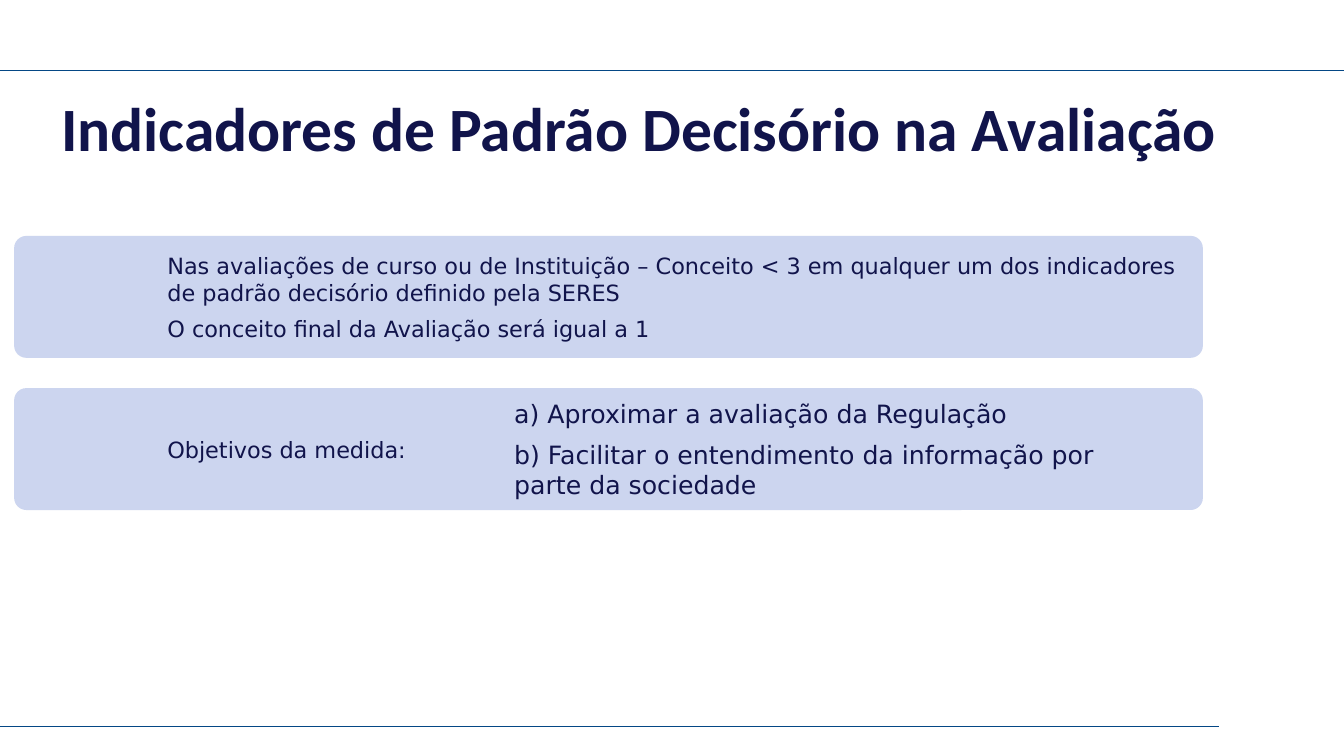
"""Build the slide on decisive indicators in course evaluation."""
from lxml.etree import SubElement
from pptx import Presentation
from pptx.dml.color import RGBColor
from pptx.enum.shapes import MSO_CONNECTOR, MSO_SHAPE
from pptx.enum.text import MSO_ANCHOR
from pptx.oxml.ns import qn
from pptx.util import Inches, Pt

WIDE, HIGH = 13.33, 7.5
NAVY, BLUE, PALE = "11144B", "044785", "CCD5EF"
TITLE = "Indicadores de Padrão Decisório na Avaliação"
RULES = [(7.21, 12.09), (0.7, WIDE)]
BAND = {"left": 0.14, "top": 2.34, "width": 11.79, "height": 1.21, "step": 1.51}
BANDS = [
    [
        (1.53, 10.39, 16, [
            "Nas avaliações de curso ou de Instituição – Conceito < 3 em qualquer "
            "um dos indicadores de padrão decisório definido pela SERES",
            "O conceito final da Avaliação será igual a 1",
        ]),
    ],
    [
        (1.53, 5.3, 16, ["Objetivos da medida:"]),
        (4.97, 6.57, 18, [
            "a) Aproximar a avaliação da Regulação",
            "b) Facilitar o entendimento da informação por parte da sociedade",
        ]),
    ],
]


def color(code):
    return RGBColor.from_string(code)


def add_rule(slide, y, end):
    line = slide.shapes.add_connector(
        MSO_CONNECTOR.STRAIGHT, 0, Inches(y), Inches(end), Inches(y))
    line.line.color.rgb = color(BLUE)
    line.line.width = Pt(0.5)
    SubElement(line._element.spPr, qn("a:effectLst"))


def add_text(slide, box, lines, size, face):
    frame = slide.shapes.add_textbox(*map(Inches, box)).text_frame
    frame.word_wrap = True
    frame.text = "\n".join(lines)
    for para in frame.paragraphs:
        font = para.font
        font.name, font.size = face, Pt(size)
        font.color.rgb = color(NAVY)
    return frame


def add_band(slide, top, texts):
    high = BAND["height"]
    box = BAND["left"], top, BAND["width"], high
    band = slide.shapes.add_shape(MSO_SHAPE.ROUNDED_RECTANGLE, *map(Inches, box))
    band.adjustments[0] = 0.1
    band.shadow.inherit = False
    band.fill.solid()
    band.fill.fore_color.rgb = color(PALE)
    band.line.fill.background()
    for left, width, size, lines in texts:
        frame = add_text(slide, (left, top, width, high), lines, size, "DejaVu Sans")
        frame.vertical_anchor = MSO_ANCHOR.MIDDLE
        frame.margin_left = frame.margin_right = Inches(0.13)
        frame.margin_top = frame.margin_bottom = Inches(0.13)
        for para in frame.paragraphs:
            para.space_after = Pt(0.4 * size)


def main():
    deck = Presentation()
    deck.slide_width, deck.slide_height = Inches(WIDE), Inches(HIGH)
    slide = deck.slides.add_slide(deck.slide_layouts[6])
    for y, end in RULES:
        add_rule(slide, y, end)
    title = add_text(slide, (0.51, 0.93, 11.83, 0.64), [TITLE], 44, "Calibri")
    title.paragraphs[0].font.bold = True
    title.paragraphs[0].line_spacing = 0.9
    for row, texts in enumerate(BANDS):
        add_band(slide, BAND["top"] + row * BAND["step"], texts)
    deck.save("out.pptx")


if __name__ == "__main__":
    main()
